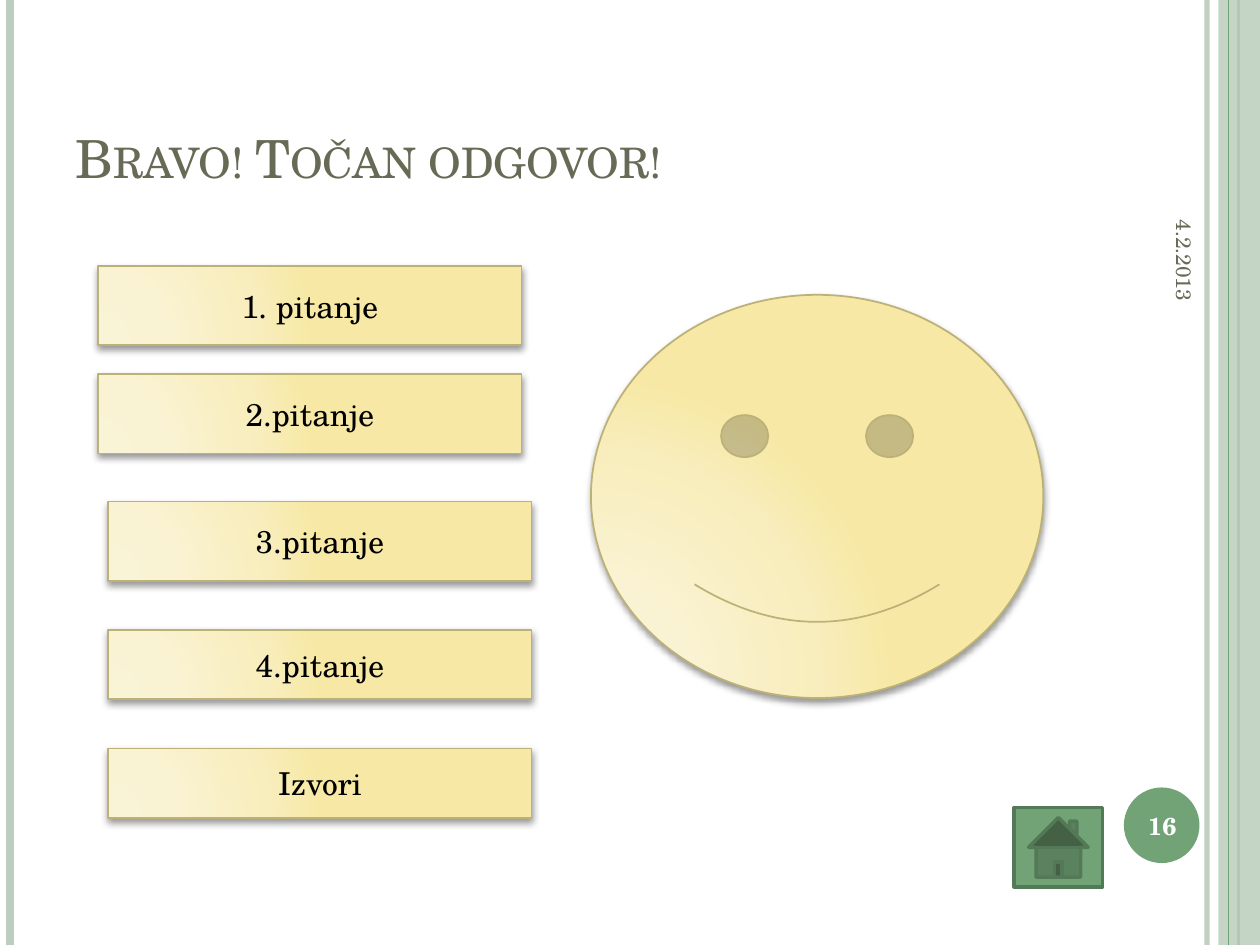
from collections import namedtuple
from dataclasses import dataclass

from lxml.etree import SubElement
from pptx import Presentation
from pptx.dml.color import RGBColor
from pptx.enum.shapes import MSO_CONNECTOR, MSO_SHAPE
from pptx.enum.text import MSO_ANCHOR as Anchor, PP_ALIGN as Align
from pptx.oxml import parse_xml
from pptx.oxml.ns import nsdecls, qn
from pptx.util import Inches, Pt

Box = namedtuple("Box", "left top width height")


@dataclass(frozen=True)
class Theme:
    font: str = "TeX Gyre Schola"
    pale_green: str = "BCCEBD"
    green: str = "72A376"
    dark_green: str = "547957"
    olive: str = "676A55"
    gold: str = "BCB176"
    black: str = "000000"
    white: str = "FFFFFF"
    glow: tuple = ((0, "FAF4D7"), (30, "FAF3D3"), (75, "F8EDBC"), (100, "F7E9A5"))
    title_size: int = 30
    button_size: int = 18
    number_size: int = 14
    date_size: int = 12


THEME = Theme()


def inches(left, top, width, height):
    return Box(*map(Inches, (left, top, width, height)))


def set_alpha(color_parent, percent):
    color = color_parent.find(".//" + qn("a:srgbClr"))
    SubElement(color, qn("a:alpha")).set("val", str(percent * 1000))


def add_rule(slide, x, top, height, color, weight, alpha=None):
    rule = slide.shapes.add_connector(MSO_CONNECTOR.STRAIGHT, x, top, x, top + height)
    rule.line.color.rgb = RGBColor.from_string(color)
    rule.line.width = Pt(weight)
    properties = rule._element.spPr
    if alpha:
        set_alpha(properties, alpha)
    SubElement(properties, qn("a:effectLst"))


def add_figure(slide, preset, box, fill, line=None, weight=1):
    figure = slide.shapes.add_shape(preset, *box)
    figure.shadow.inherit = False
    figure.fill.solid()
    figure.fill.fore_color.rgb = RGBColor.from_string(fill)
    if line:
        figure.line.color.rgb = RGBColor.from_string(line)
        figure.line.width = Pt(weight)
    else:
        figure.line.fill.background()
    return figure


def add_glowing_figure(slide, preset, box):
    """Gold figure with a radial gradient and a soft shadow below."""
    figure = add_figure(slide, preset, box, THEME.glow[-1][1], THEME.gold)
    properties = figure._element.spPr
    stops = "".join(
        f'<a:gs pos="{position * 1000}"><a:srgbClr val="{color}"/></a:gs>'
        for position, color in THEME.glow
    )
    gradient = parse_xml(
        f'<a:gradFill {nsdecls("a")} rotWithShape="1"><a:gsLst>{stops}</a:gsLst>'
        '<a:path path="circle"><a:fillToRect l="5000" t="100000" r="120000" b="10000"/>'
        "</a:path></a:gradFill>"
    )
    properties.replace(properties.find(qn("a:solidFill")), gradient)
    shadow = parse_xml(
        f'<a:outerShdw {nsdecls("a")} blurRad="{Pt(4)}" dist="{Pt(2)}" dir="5400000" '
        f'rotWithShape="0"><a:srgbClr val="{THEME.black}"><a:alpha val="40000"/>'
        "</a:srgbClr></a:outerShdw>"
    )
    properties.find(qn("a:effectLst")).append(shadow)
    return figure


def write(shape, text, size, color, align=Align.LEFT, anchor=Anchor.MIDDLE, bold=False):
    frame = shape.text_frame
    frame.word_wrap = True
    frame.vertical_anchor = anchor
    paragraph = frame.paragraphs[0]
    paragraph.alignment = align
    run = paragraph.add_run()
    run.text = text
    for name, value in {"name": THEME.font, "size": Pt(size), "bold": bold}.items():
        setattr(run.font, name, value)
    run.font.color.rgb = RGBColor.from_string(color)
    return run


def add_frame(slide, box):
    """Green rules and band along both sides of the slide."""
    right = box.left + box.width
    span = (box.top, box.height)
    add_rule(slide, right - Inches(0.42), *span, THEME.pale_green, 3, alpha=93)
    add_rule(slide, box.left + Inches(0.08), *span, THEME.pale_green, 4.5)
    add_rule(slide, right - Inches(0.17), *span, THEME.green, 1.5)
    band_width = Inches(0.33)
    band_box = Box(right - band_width, box.top, band_width, box.height)
    band = add_figure(slide, MSO_SHAPE.RECTANGLE, band_box, THEME.pale_green)
    set_alpha(band._element.spPr, 87)
    add_rule(slide, right - Inches(0.25), *span, THEME.green, 0.75)


def add_navigation(slide, box, number):
    """Home button on the left, round slide number on the right."""
    disc_size = Inches(0.6)
    disc_left = box.left + box.width - disc_size
    disc_box = Box(disc_left, box.top, disc_size, disc_size)
    add_figure(slide, MSO_SHAPE.OVAL, disc_box, THEME.green)
    home_box = Box(box.left, box.top + Inches(0.16), Inches(0.7), Inches(0.63))
    add_figure(slide, MSO_SHAPE.ACTION_BUTTON_HOME, home_box,
               THEME.green, THEME.dark_green, 2)
    label = slide.shapes.add_textbox(disc_left - Inches(0.03), box.top + Inches(0.02),
                                     Inches(0.67), Inches(0.57))
    write(label, number, THEME.number_size, THEME.white, Align.CENTER, bold=True)


def add_title(slide, box, text):
    title = slide.shapes.add_textbox(*box)
    run = write(title, text, THEME.title_size, THEME.olive, anchor=Anchor.BOTTOM)
    run.font._element.set("cap", "small")


def add_date(slide, box, text):
    date = slide.shapes.add_textbox(*box)
    date.rotation = 90
    write(date, text, THEME.date_size, THEME.olive, Align.RIGHT)


def add_menu(slide, box, entries):
    """Question buttons; each entry has its indent, offset, height and label."""
    for indent, offset, height, label in entries:
        button_box = Box(box.left + Inches(indent), box.top + Inches(offset),
                         box.width, Inches(height))
        button = add_glowing_figure(slide, MSO_SHAPE.ACTION_BUTTON_CUSTOM, button_box)
        write(button, label, THEME.button_size, THEME.black, Align.CENTER)


def main():
    deck = Presentation()
    deck.slide_width, deck.slide_height = Inches(10), Inches(7.5)
    slide = deck.slides.add_slide(deck.slide_layouts[6])

    add_frame(slide, inches(0, 0, 10, 7.5))
    add_navigation(slide, inches(8.05, 6.25, 1.47, 0.79), "16")
    add_title(slide, inches(0.5, 0.3, 8.17, 1.25), "Bravo! Točan odgovor!")
    add_date(slide, inches(8.3, 1.18, 2.2, 0.42), "4.2.2013")
    add_glowing_figure(slide, MSO_SHAPE.SMILEY_FACE, inches(4.69, 2.34, 3.59, 3.2))
    add_menu(slide, inches(0.78, 2.11, 3.36, 4.38), (
        (0, 0, 0.63, "1. pitanje"),
        (0, 0.86, 0.63, "2.pitanje"),
        (0.08, 1.87, 0.63, "3.pitanje"),
        (0.08, 2.89, 0.55, "4.pitanje"),
        (0.08, 3.83, 0.55, "Izvori"),
    ))
    deck.save("out.pptx")


if __name__ == "__main__":
    main()
